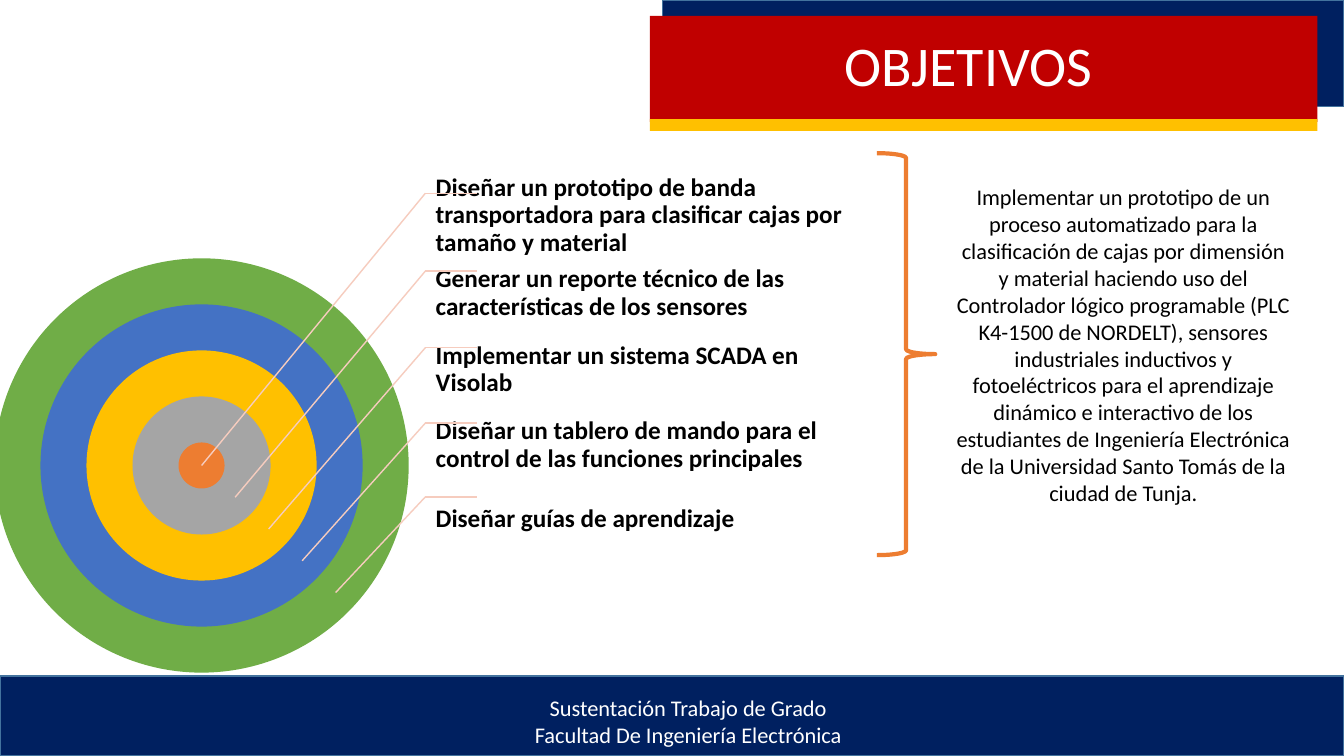
from lxml.etree import SubElement
from pptx import Presentation
from pptx.dml.color import RGBColor
from pptx.enum.shapes import MSO_CONNECTOR, MSO_SHAPE
from pptx.enum.text import MSO_ANCHOR, MSO_AUTO_SIZE, PP_ALIGN
from pptx.oxml.ns import qn
from pptx.util import Cm, Pt

NAVY, RED, GOLD, ORANGE = "002060", "C00000", "FFC000", "ED7D31"
WHITE, BLACK, NAVY_EDGE, LEADER = "FFFFFF", "000000", "43739E", "F6CCBE"

# Rings from the outside in
RING_COLORS = ["70AD47", "4472C4", GOLD, "A5A5A5", ORANGE]
RING_UNIT = 1.16
CENTER_X, CENTER_Y = 5.08, 11.73

# Top of each label, with its wording
OBJECTIVES = [
    (4.52, "Diseñar un prototipo de banda transportadora para clasificar cajas por tamaño y material"),
    (6.48, "Generar un reporte técnico de las características de los sensores"),
    (8.41, "Implementar un sistema SCADA en Visolab"),
    (10.31, "Diseñar un tablero de mando para el control de las funciones principales"),
    (12.17, "Diseñar guías de aprendizaje"),
]

GENERAL_OBJECTIVE = (
    "Implementar un prototipo de un proceso automatizado para la clasificación de cajas "
    "por dimensión y material haciendo uso del Controlador lógico programable "
    "(PLC K4-1500 de NORDELT), sensores industriales inductivos y fotoeléctricos para el "
    "aprendizaje dinámico e interactivo de los estudiantes de Ingeniería Electrónica "
    "de la Universidad Santo Tomás de la ciudad de Tunja."
)


def color(value):
    return RGBColor.from_string(value)


def apply(target, values):
    for name, value in values.items():
        setattr(target, name, value)


class SlideBuilder:
    font_name = "Calibri"

    def __init__(self, page):
        self.page = page

    def shape(self, kind, left, top, width, height, fill=None, line=None, weight=1):
        item = self.page.shapes.add_shape(kind, Cm(left), Cm(top), Cm(width), Cm(height))
        item.shadow.inherit = False
        if fill:
            item.fill.solid()
            item.fill.fore_color.rgb = color(fill)
        else:
            item.fill.background()
        if line:
            item.line.color.rgb = color(line)
            item.line.width = Pt(weight)
        else:
            item.line.fill.background()

    def line(self, start, end, stroke):
        points = [Cm(value) for value in (*start, *end)]
        item = self.page.shapes.add_connector(MSO_CONNECTOR.STRAIGHT, *points)
        item.line.color.rgb = color(stroke)
        item.line.width = Pt(1)
        SubElement(item._element.spPr, qn("a:effectLst"))

    def text(self, left, top, width, height, lines, size, fill,
             bold=False, frame_format=None, para_format=None):
        box = self.page.shapes.add_textbox(Cm(left), Cm(top), Cm(width), Cm(height))
        frame = box.text_frame
        apply(frame, {"word_wrap": True, **(frame_format or {})})
        for index, wording in enumerate(lines):
            para = frame.add_paragraph() if index else frame.paragraphs[0]
            apply(para, para_format or {})
            span = para.add_run()
            span.text = wording
            apply(span.font, {"name": self.font_name, "size": Pt(size), "bold": bold})
            span.font.color.rgb = color(fill)


def main():
    deck = Presentation()
    apply(deck, {"slide_width": Cm(33.87), "slide_height": Cm(19.05)})
    builder = SlideBuilder(deck.slides.add_slide(deck.slide_layouts[6]))
    centered = {"alignment": PP_ALIGN.CENTER}

    # Footer
    builder.shape(MSO_SHAPE.RECTANGLE, 0, 17.04, 33.87, 2.01, NAVY, NAVY_EDGE)
    builder.text(11.63, 17.65, 11.43, 1.02,
                 ["Sustentación Trabajo de Grado", "Facultad De Ingeniería Electrónica"],
                 16, WHITE, frame_format={"vertical_anchor": MSO_ANCHOR.MIDDLE},
                 para_format=centered)

    # Title banner
    builder.shape(MSO_SHAPE.RECTANGLE, 16.69, 0, 17.18, 2.69, NAVY, NAVY_EDGE)
    builder.shape(MSO_SHAPE.RECTANGLE, 16.38, 0.4, 16.82, 2.67, RED)
    builder.shape(MSO_SHAPE.RECTANGLE, 16.38, 3, 16.82, 0.3, GOLD)

    # Concentric rings
    for index, fill in enumerate(RING_COLORS):
        diameter = RING_UNIT * (9 - 2 * index)
        builder.shape(MSO_SHAPE.OVAL, CENTER_X - diameter / 2, CENTER_Y - diameter / 2,
                      diameter, diameter, fill)

    # Specific objectives with their leader lines
    label_frame = {"vertical_anchor": MSO_ANCHOR.MIDDLE, "margin_left": Cm(0.36),
                   "margin_top": Cm(0.08), "margin_right": Cm(0.08), "margin_bottom": Cm(0.08)}
    for index, (top, wording) in enumerate(OBJECTIVES):
        builder.text(10.62, top, 11.2, 1.83, [wording], 18, BLACK, True,
                     label_frame, {"line_spacing": 0.9})
        elbow = (10.72, top + 0.35)
        tip = (CENTER_X + 0.845 * index, CENTER_Y + 0.8 * index)
        builder.line(elbow, (12.01, top + 0.35), LEADER)
        builder.line(elbow, tip, LEADER)

    # General objective
    builder.text(23.85, 4.5, 8.92, 9.5, [GENERAL_OBJECTIVE], 16, BLACK,
                 frame_format={"auto_size": MSO_AUTO_SIZE.SHAPE_TO_FIT_TEXT},
                 para_format=centered)
    builder.shape(MSO_SHAPE.RIGHT_BRACE, 22.1, 3.86, 1.47, 10.13, line=ORANGE, weight=3)

    # Title
    builder.text(21.03, 0.84, 12, 2.67, ["OBJETIVOS"], 40, WHITE,
                 para_format={"line_spacing": 0.9})

    deck.save("out.pptx")


if __name__ == "__main__":
    main()
